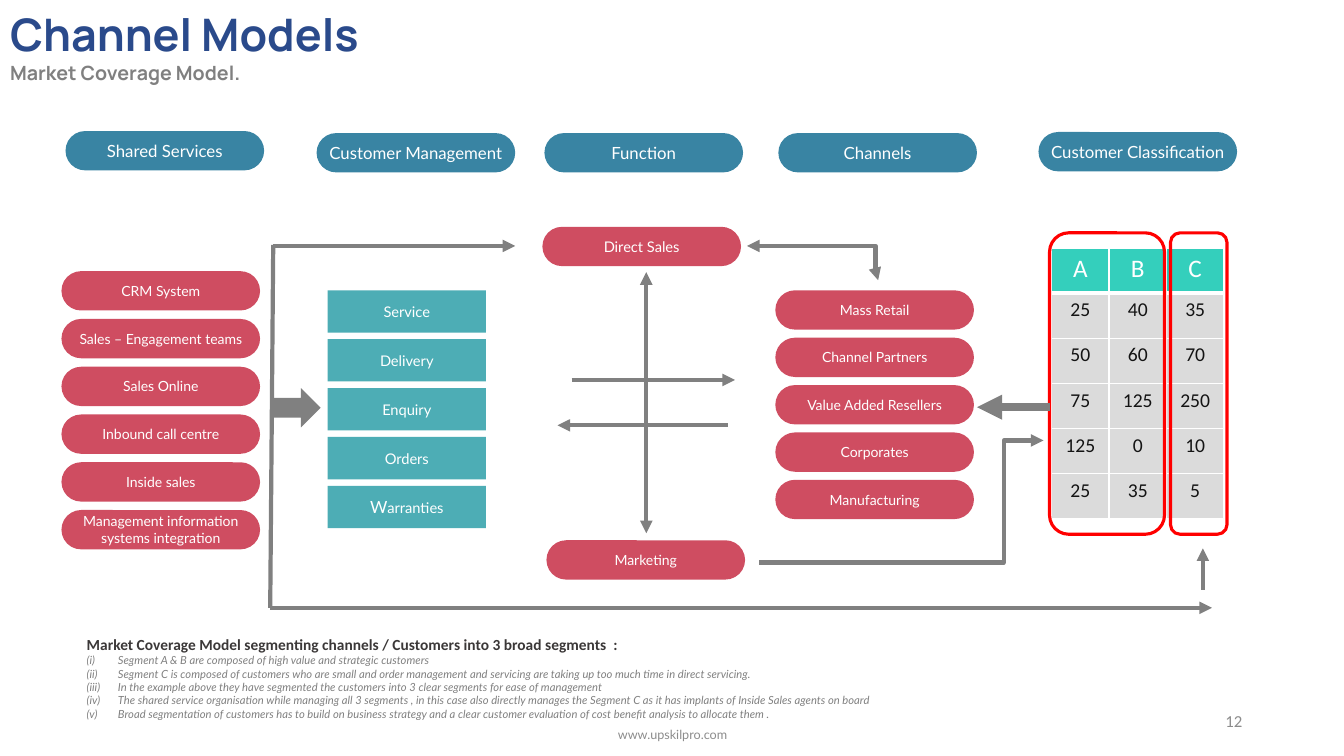
"""Build the Channel Models slide with its market coverage diagram."""
from lxml.etree import SubElement
from pptx import Presentation
from pptx.dml.color import RGBColor
from pptx.enum.shapes import MSO_CONNECTOR, MSO_SHAPE
from pptx.enum.text import MSO_ANCHOR, MSO_AUTO_SIZE, PP_ALIGN
from pptx.oxml.ns import qn
from pptx.util import Inches, Pt

COLORS = {
    "title": "2A4A8B", "gray": "808080", "footer": "8C8C8C", "dark": "3B3838",
    "header": "3984A3", "pill": "CF4D61", "service": "4DADB5", "class": "23CBB7",
    "cell": "D9D9D9", "white": "FFFFFF", "black": "000000", "red": "FF0000",
}
PILL_WIDTH, PILL_HEIGHT = 1.97, 0.39
HEADERS = [
    ("Shared Services", 0.65, 1.3), ("Customer Management", 3.14, 1.32),
    ("Function", 5.4, 1.32), ("Channels", 7.72, 1.32),
    ("Customer Classification", 10.3, 1.31),
]
SHARED_SERVICES = [
    "CRM System", "Sales – Engagement teams", "Sales Online", "Inbound call centre",
    "Inside sales", "Management information systems integration",
]
CHANNELS = [
    "Mass Retail", "Channel Partners", "Value Added Resellers", "Corporates",
    "Manufacturing",
]
SERVICES = [
    ("", "Service"), ("", "Delivery"), ("", "Enquiry"), ("", "Orders"),
    ("W", "arranties"),
]
CLASSIFICATION = [
    ("A", "B", "C"), ("25", "40", "35"), ("50", "60", "70"),
    ("75", "125", "250"), ("125", "0", "10"), ("25", "35", "5"),
]
SEGMENT_HEADING = (
    "Market Coverage Model segmenting channels / Customers into 3 broad segments  :"
)
SEGMENT_NOTES = [
    "Segment A & B are composed of high value and strategic customers",
    "Segment C is composed of customers who are small and order management and "
    "servicing are taking up too much time in direct servicing.",
    "In the example above they have segmented the customers into 3 clear segments "
    "for ease of management",
    "The shared service organisation while managing all 3 segments , in this case "
    "also directly manages the Segment C as it has implants of Inside Sales agents "
    "on board",
    "Broad segmentation of customers has to build on business strategy and a clear "
    "customer evaluation of cost benefit analysis to allocate them .",
]


def rgb(name):
    """Return the named colour."""
    return RGBColor.from_string(COLORS[name])


def inches(*values):
    """Convert several numbers to lengths."""
    return [Inches(value) for value in values]


def spread(first, last, count):
    """Return evenly spaced positions from first to last."""
    return [first + (last - first) * i / (count - 1) for i in range(count)]


def write(paragraph, text, *, size, color="white", font="Lato", bold=False,
          italic=False, align=PP_ALIGN.CENTER):
    """Append formatted text to a paragraph."""
    paragraph.alignment = align
    paragraph.space_before = Pt(0)
    run = paragraph.add_run()
    run.text = text
    run.font.size = Pt(size)
    run.font.name = font
    run.font.bold = bold
    run.font.italic = italic
    run.font.color.rgb = rgb(color)


def add_block(slide, preset, box, fill, inset=True):
    """Add a plain filled shape ready for centred text."""
    block = slide.shapes.add_shape(preset, *inches(*box))
    block.shadow.inherit = False
    block.fill.solid()
    block.fill.fore_color.rgb = rgb(fill)
    block.line.fill.background()
    frame = block.text_frame
    frame.word_wrap = True
    frame.vertical_anchor = MSO_ANCHOR.MIDDLE
    if not inset:
        frame.margin_left = frame.margin_right = 0
        frame.margin_top = frame.margin_bottom = 0
    return block


def add_pill(slide, text, left, top, fill="pill", size=10, inset=True):
    """Add a labelled pill."""
    box = (left, top, PILL_WIDTH, PILL_HEIGHT)
    pill = add_block(slide, MSO_SHAPE.ROUNDED_RECTANGLE, box, fill, inset)
    pill.adjustments[0] = 0.5
    write(pill.text_frame.paragraphs[0], text, size=size)


def add_service(slide, initial, rest, top):
    """Add a customer management box, with an optional larger initial."""
    service = add_block(slide, MSO_SHAPE.RECTANGLE, (3.25, top, 1.57, 0.42),
                        "service", inset=False)
    paragraph = service.text_frame.paragraphs[0]
    if initial:
        write(paragraph, initial, size=12)
    write(paragraph, rest, size=10.5)


def add_flow(slide, start, end, *, width=3, ends=("tailEnd",), bend=None):
    """Add a gray flow line, bent at a share of its width if given."""
    kind = MSO_CONNECTOR.STRAIGHT if bend is None else MSO_CONNECTOR.ELBOW
    flow = slide.shapes.add_connector(kind, *inches(*start, *end))
    flow.line.color.rgb = rgb("gray")
    flow.line.width = Pt(width)
    properties = flow._element.spPr
    for end_tag in ends:
        SubElement(properties.find(qn("a:ln")), qn("a:" + end_tag), type="triangle")
    SubElement(properties, qn("a:effectLst"))
    if bend is not None:
        guides = properties.find(qn("a:prstGeom")).find(qn("a:avLst"))
        SubElement(guides, qn("a:gd"), name="adj1", fmla=f"val {round(bend * 100000)}")


def add_segment(slide, left, width):
    """Outline a customer segment in red."""
    segment = add_block(slide, MSO_SHAPE.ROUNDED_RECTANGLE,
                        (left, 2.31, width, 2.99), "white")
    tint = segment._element.spPr.find(qn("a:solidFill")).find(qn("a:srgbClr"))
    SubElement(tint, qn("a:alpha"), val="8000")
    segment.line.color.rgb = rgb("red")
    segment.line.width = Pt(2.25)


def add_cell_borders(cell, bottom_width):
    """Give a table cell white borders."""
    properties = cell._tc.get_or_add_tcPr()
    for position, side in enumerate(("lnL", "lnR", "lnT", "lnB")):
        width = bottom_width if side == "lnB" else 1
        border = properties.makeelement(qn("a:" + side), {"w": str(Pt(width))})
        fill = SubElement(border, qn("a:solidFill"))
        SubElement(fill, qn("a:srgbClr"), val=COLORS["white"])
        properties.insert(position, border)


def add_classification(slide):
    """Add the customer classification table."""
    table = slide.shapes.add_table(len(CLASSIFICATION), 3,
                                   *inches(10.43, 2.46, 1.71, 2.69)).table
    for r, values in enumerate(CLASSIFICATION):
        heading = r == 0
        for c, value in enumerate(values):
            cell = table.cell(r, c)
            cell.fill.solid()
            cell.fill.fore_color.rgb = rgb("class" if heading else "cell")
            add_cell_borders(cell, 3 if heading else 1)
            write(cell.text_frame.paragraphs[0], value, font="Calibri",
                  size=18 if heading else 14, color="white" if heading else "black")


def place(holder, box, anchor=MSO_ANCHOR.TOP):
    """Position a text holder and return its frame."""
    holder.left, holder.top, holder.width, holder.height = inches(*box)
    frame = holder.text_frame
    frame.word_wrap = True
    frame.auto_size = MSO_AUTO_SIZE.NONE
    frame.vertical_anchor = anchor
    return frame


def add_title(slide):
    """Fill the title placeholder with the title and its subtitle."""
    frame = place(slide.shapes.title, (0, 0.02, 4.55, 0.88))
    look = {"font": "Manrope", "bold": True, "align": PP_ALIGN.LEFT}
    write(frame.paragraphs[0], "Channel Models", size=32, color="title", **look)
    write(frame.add_paragraph(), "Market Coverage Model.", size=14, color="gray", **look)


def add_notes_list(slide):
    """Fill the body placeholder with the segment explanations."""
    frame = place(slide.placeholders[1], (0.76, 6.25, 10.53, 0.96))
    heading = frame.paragraphs[0]
    properties = heading._p.get_or_add_pPr()
    properties.set("marL", "0")
    properties.set("indent", "0")
    SubElement(properties, qn("a:buNone"))
    write(heading, SEGMENT_HEADING, size=11, color="dark", font="Calibri", bold=True,
          align=PP_ALIGN.LEFT)
    for note in SEGMENT_NOTES:
        paragraph = frame.add_paragraph()
        properties = paragraph._p.get_or_add_pPr()
        properties.set("marL", str(Inches(0.31)))
        properties.set("indent", str(-Inches(0.31)))
        SubElement(properties, qn("a:buFont"), typeface="+mj-lt")
        SubElement(properties, qn("a:buAutoNum"), type="romanLcParenBoth")
        write(paragraph, note, size=8, color="gray", italic=True, align=PP_ALIGN.LEFT)


def add_footer(slide, text, box, **look):
    """Add a line of footer text."""
    frame = place(slide.shapes.add_textbox(*inches(*box)), box, MSO_ANCHOR.MIDDLE)
    write(frame.paragraphs[0], text, color="footer", **look)


def main():
    """Build and save the slide."""
    deck = Presentation()
    deck.slide_width, deck.slide_height = inches(13.33, 7.5)
    slide = deck.slides.add_slide(deck.slide_layouts[1])
    add_title(slide)
    for text, left, top in HEADERS:
        add_pill(slide, text, left, top, fill="header", size=12, inset=False)
    for text, top in zip(SHARED_SERVICES, spread(2.69, 5.06, len(SHARED_SERVICES))):
        add_pill(slide, text, 0.61, top)
    for text, top in zip(CHANNELS, spread(2.88, 4.76, len(CHANNELS))):
        add_pill(slide, text, 7.69, top)
    for (initial, rest), top in zip(SERVICES, spread(2.88, 4.82, len(SERVICES))):
        add_service(slide, initial, rest, top)
    add_pill(slide, "Direct Sales", 5.38, 2.25, size=10.5)
    add_pill(slide, "Marketing", 5.42, 5.36)
    add_block(slide, MSO_SHAPE.RIGHT_ARROW, (2.71, 3.85, 0.47, 0.39), "gray")
    both = ("headEnd", "tailEnd")
    add_flow(slide, (2.71, 2.43), (2.68, 6.03), ends=())
    add_flow(slide, (2.71, 2.44), (5.11, 2.44))
    add_flow(slide, (2.68, 6.03), (12.02, 6.03))
    add_flow(slide, (7.41, 2.44), (8.71, 2.78), ends=both, bend=0.98)
    add_flow(slide, (7.53, 5.58), (10.35, 4.37), bend=0.86)
    add_flow(slide, (7.22, 4.22), (5.53, 4.22))
    add_flow(slide, (5.67, 3.77), (7.29, 3.77))
    add_flow(slide, (6.41, 5.29), (6.41, 2.7), ends=both)
    add_flow(slide, (11.93, 5.85), (11.93, 5.44))
    add_classification(slide)
    add_segment(slide, 10.41, 1.14)
    add_flow(slide, (10.41, 4.04), (9.69, 4.04), width=6)
    add_segment(slide, 11.61, 0.56)
    add_notes_list(slide)
    add_footer(slide, "12", (9.42, 6.95, 3, 0.4), size=12, font="Calibri",
               align=PP_ALIGN.RIGHT)
    add_footer(slide, "www.upskilpro.com", (4.42, 7.09, 4.5, 0.4), size=9)
    deck.save("out.pptx")


if __name__ == "__main__":
    main()
